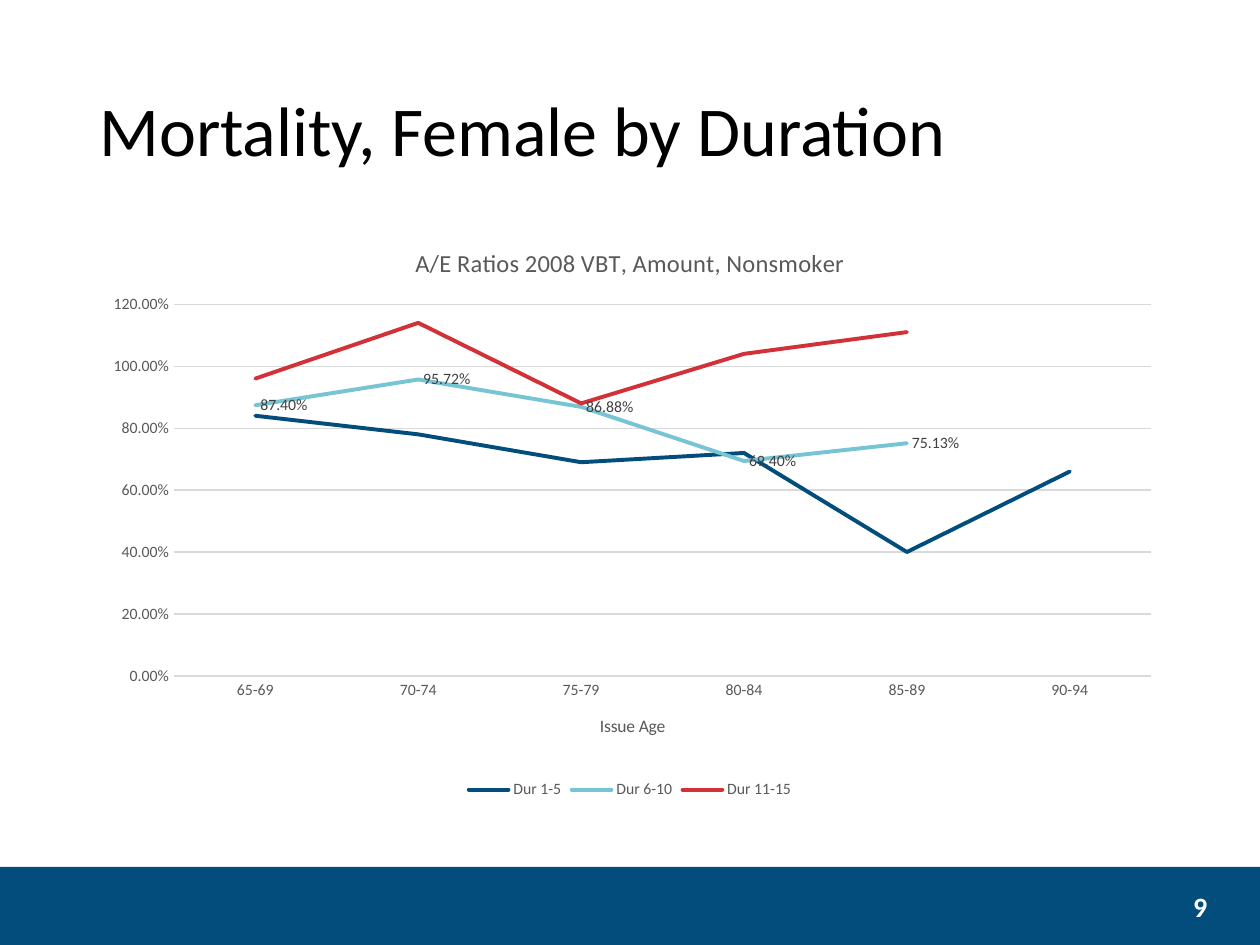
from lxml.etree import SubElement
from pptx import Presentation
from pptx.chart.data import CategoryChartData
from pptx.dml.color import RGBColor
from pptx.enum.chart import XL_CHART_TYPE, XL_LABEL_POSITION, XL_LEGEND_POSITION, XL_TICK_MARK
from pptx.enum.shapes import MSO_SHAPE
from pptx.enum.text import MSO_ANCHOR, PP_ALIGN
from pptx.oxml.ns import qn
from pptx.util import Inches, Pt

# Content
HEADING = "Mortality, Female by Duration"
PAGE_NUMBER = "9"
CHART_TITLE = "A/E Ratios 2008 VBT, Amount, Nonsmoker"
AGE_TITLE = "Issue Age"
AGES = ["65-69", "70-74", "75-79", "80-84", "85-89", "90-94"]
DURATIONS = [  # name, colour, ratios, labelled
    ("Dur 1-5", "024D7C", [0.84, 0.78, 0.69, 0.72, 0.4, 0.66], False),
    ("Dur 6-10", "77C4D5", [0.874, 0.9572, 0.8688, 0.694, 0.7513, None], True),
    ("Dur 11-15", "D23138", [0.96, 1.14, 0.88, 1.04, 1.11, None], False),
]

# Format
NAVY, GRAY, GRID, LABEL = "024D7C", "595959", "D9D9D9", "404040"
PERCENT = "0.00%"
PLOT_LAYOUT = {"x": 0.08, "y": 0.14, "w": 0.9, "h": 0.64}  # shares of the chart


def rgb(value):
    return RGBColor.from_string(value)


def style_font(font, size, color, bold=False):
    for key, value in {"name": "Calibri", "size": Pt(size), "bold": bold}.items():
        setattr(font, key, value)
    font.color.rgb = rgb(color)


def style_line(line, color, width):
    line.color.rgb = rgb(color)
    line.width = Pt(width)


def add_text(slide, text, box, size, color, bold=False, align=PP_ALIGN.LEFT):
    frame = slide.shapes.add_textbox(*map(Inches, box)).text_frame
    frame.word_wrap = True
    frame.vertical_anchor = MSO_ANCHOR.MIDDLE
    paragraph = frame.paragraphs[0]
    paragraph.text = text
    paragraph.alignment = align
    paragraph.line_spacing = 0.9
    style_font(paragraph.runs[0].font, size, color, bold)


def set_title(owner, text, size):
    frame = owner.text_frame
    frame.text = text
    style_font(frame.paragraphs[0].runs[0].font, size, GRAY)


def set_plot_layout(chart):
    plot_area = chart._chartSpace.chart.plotArea
    for old in plot_area.findall(qn("c:layout")):
        plot_area.remove(old)
    layout = SubElement(plot_area, qn("c:layout"))
    plot_area.insert(0, layout)
    manual = SubElement(layout, qn("c:manualLayout"))
    settings = {"layoutTarget": "inner", "xMode": "edge", "yMode": "edge", **PLOT_LAYOUT}
    for key, value in settings.items():
        SubElement(manual, qn(f"c:{key}")).set("val", str(value))


def add_ratio_chart(slide):
    data = CategoryChartData(number_format=PERCENT)
    data.categories = AGES
    for name, _, ratios, _ in DURATIONS:
        data.add_series(name, ratios)
    box = map(Inches, (0.69, 1.77, 8.62, 4.61))
    chart = slide.shapes.add_chart(XL_CHART_TYPE.LINE, *box, data).chart
    style_font(chart.font, 10, "000000")
    chart.has_title = True
    set_title(chart.chart_title, CHART_TITLE, 14)
    chart.chart_title.include_in_layout = False

    # Axes
    ages, ratios_axis = chart.category_axis, chart.value_axis
    for axis in (ages, ratios_axis):
        axis.major_tick_mark = axis.minor_tick_mark = XL_TICK_MARK.NONE
        style_font(axis.tick_labels.font, 9, GRAY)
    set_title(ages.axis_title, AGE_TITLE, 10)
    style_line(ages.format.line, GRID, 0.75)
    for key, value in {"minimum_scale": 0, "maximum_scale": 1.2, "major_unit": 0.2}.items():
        setattr(ratios_axis, key, value)
    ratios_axis.tick_labels.number_format = PERCENT
    ratios_axis.tick_labels.number_format_is_linked = False
    ratios_axis.format.line.fill.background()
    style_line(ratios_axis.major_gridlines.format.line, GRID, 0.75)

    # Legend
    chart.has_legend = True
    chart.legend.position = XL_LEGEND_POSITION.BOTTOM
    chart.legend.include_in_layout = False
    style_font(chart.legend.font, 9, GRAY)

    # Duration lines
    chart.plots[0].vary_by_categories = False
    for series, (_, color, _, labelled) in zip(chart.plots[0].series, DURATIONS):
        series.smooth = False
        style_line(series.format.line, color, 2.25)
        series.format.line._ln.set("cap", "rnd")
        if labelled:
            labels = series.data_labels
            style_font(labels.font, 9, LABEL)
            for key, value in {"show_value": True, "number_format": PERCENT,
                               "number_format_is_linked": False,
                               "position": XL_LABEL_POSITION.RIGHT}.items():
                setattr(labels, key, value)
    set_plot_layout(chart)


def main():
    deck = Presentation()
    deck.slide_width, deck.slide_height = Inches(10), Inches(7.5)
    slide = deck.slides.add_slide(deck.slide_layouts[6])

    # Footer band
    band = slide.shapes.add_shape(MSO_SHAPE.RECTANGLE, *map(Inches, (0, 6.88, 10, 0.62)))
    band.shadow.inherit = False
    band.fill.solid()
    band.fill.fore_color.rgb = rgb(NAVY)
    band.line.fill.background()

    add_text(slide, HEADING, (0.69, 0.36, 8.62, 1.4), 40, "000000")
    add_text(slide, PAGE_NUMBER, (9.15, 7.1, 0.53, 0.22), 16, "FFFFFF", True, PP_ALIGN.RIGHT)
    add_ratio_chart(slide)
    deck.save("out.pptx")


if __name__ == "__main__":
    main()
